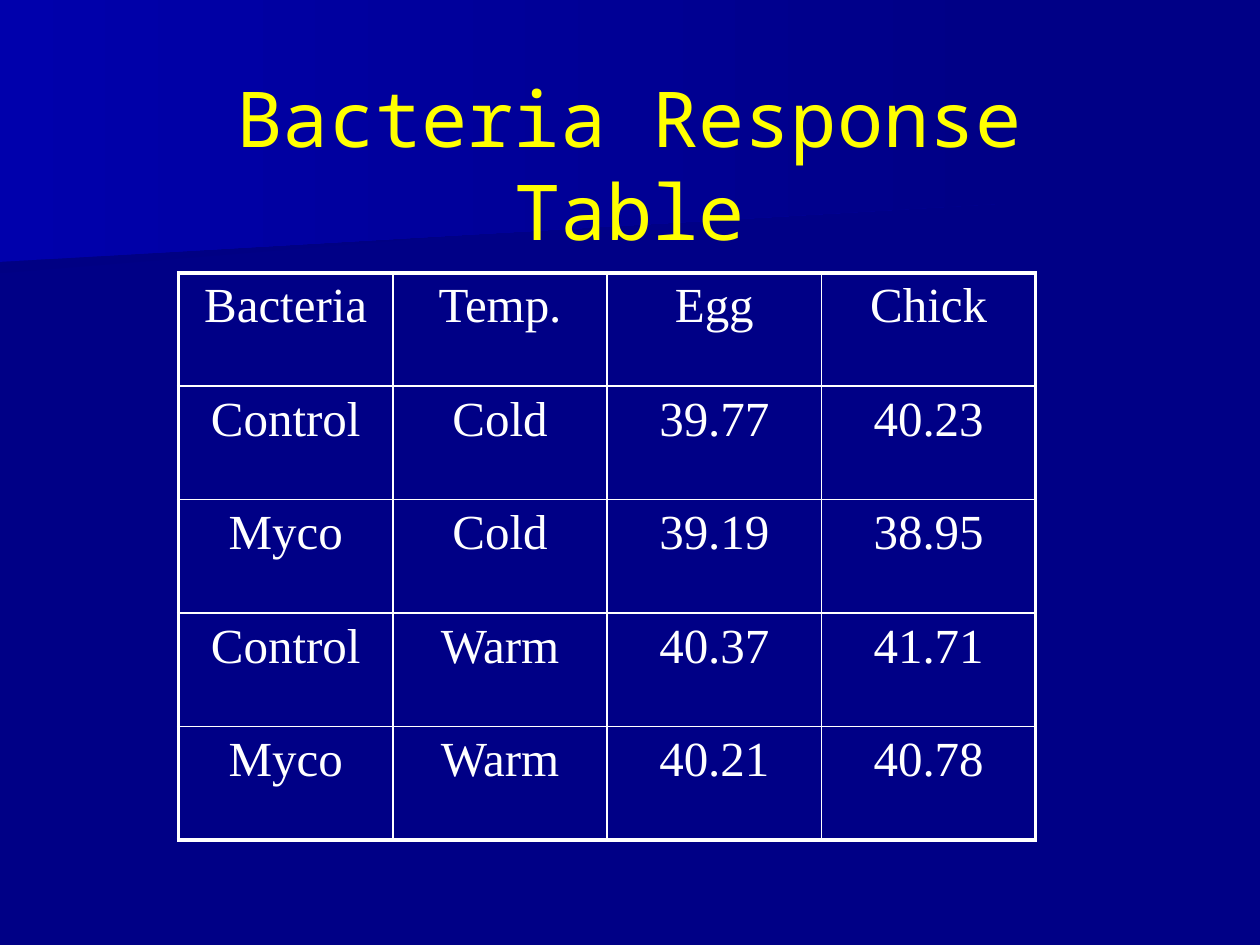
from lxml import etree
from pptx import Presentation
from pptx import util as u
from pptx.dml.color import RGBColor
from pptx.enum import text
from pptx.oxml.ns import qn

NAVY, WHITE, YELLOW = "000086", "FFFFFF", "FFFF00"
ROWS = [
    ("Bacteria", "Temp.", "Egg", "Chick"),
    ("Control", "Cold", "39.77", "40.23"),
    ("Myco", "Cold", "39.19", "38.95"),
    ("Control", "Warm", "40.37", "41.71"),
    ("Myco", "Warm", "40.21", "40.78"),
]


def rgb(value):
    return RGBColor.from_string(value)


def write(tf, content, *, size, font, color):
    p = tf.paragraphs[0]
    p.alignment = text.PP_ALIGN.CENTER
    r = p.add_run()
    r.text = content
    r.font.size = u.Pt(size)
    r.font.name = font
    r.font.color.rgb = rgb(color)


def add_band(s, points, start_color):
    """Draw a background wedge fading from left to right into navy."""
    points = [(u.Cm(x), u.Cm(y)) for x, y in points]
    builder = s.shapes.build_freeform(*points[0])
    builder.add_line_segments(points[1:], close=True)
    sp = builder.convert_to_shape()
    sp.shadow.inherit = False
    sp.line.fill.background()
    sp.fill.gradient()
    sp.fill.gradient_angle = 0
    for stop, color in zip(sp.fill.gradient_stops, (start_color, NAVY)):
        stop.color.rgb = rgb(color)


def format_title(s, content):
    sp = s.shapes.title
    sp.left, sp.top, sp.width, sp.height = u.Cm(1.9), u.Cm(1.7), u.Cm(21.59), u.Cm(3.18)
    tf = sp.text_frame
    tf.word_wrap = True
    tf.auto_size = text.MSO_AUTO_SIZE.NONE
    tf.vertical_anchor = text.MSO_ANCHOR.MIDDLE
    write(tf, content, size=44, font="Noto Sans Mono", color=YELLOW)
    s.shapes.element.append(sp.element)  # in front of the bands


def set_borders(cell, widths):
    """Set border widths in points, in the order left, right, top, bottom."""
    tc_pr = cell._tc.get_or_add_tcPr()
    for i, (side, width) in enumerate(zip("LRTB", widths)):
        ln = etree.Element(qn(f"a:ln{side}"), w=str(u.Pt(width)))
        fill = etree.SubElement(ln, qn("a:solidFill"))
        etree.SubElement(fill, qn("a:srgbClr"), val=WHITE)
        tc_pr.insert(i, ln)


def add_response_table(s, rows):
    n_rows, n_cols = len(rows), len(rows[0])
    frame = s.shapes.add_table(n_rows, n_cols, u.Cm(3.6), u.Cm(5.5), u.Cm(17.28), u.Cm(11.43))
    table = frame.table
    table.first_row = table.horz_banding = False
    for i, row in enumerate(rows):
        for j, value in enumerate(row):
            cell = table.cell(i, j)
            cell.fill.background()
            write(cell.text_frame, value, size=28, font="Times New Roman", color=WHITE)
            outer = (j == 0, j == n_cols - 1, i == 0, i == n_rows - 1)
            set_borders(cell, [2.25 if edge else 1 for edge in outer])


def main():
    prs = Presentation()
    prs.slide_width, prs.slide_height = u.Cm(25.4), u.Cm(19.05)
    s = prs.slides.add_slide(prs.slide_layouts[5])
    s.background.fill.solid()
    s.background.fill.fore_color.rgb = rgb(NAVY)
    add_band(s, [(19.76, 3.89), (0, 5.51), (0, 2.57), (19.79, 2.57)], "000083")
    add_band(s, [(20.12, 4.11), (0, 5.28), (0, 0), (20.12, 0)], "0000AC")
    format_title(s, "Bacteria Response Table")
    add_response_table(s, ROWS)
    prs.save("out.pptx")


if __name__ == "__main__":
    main()
